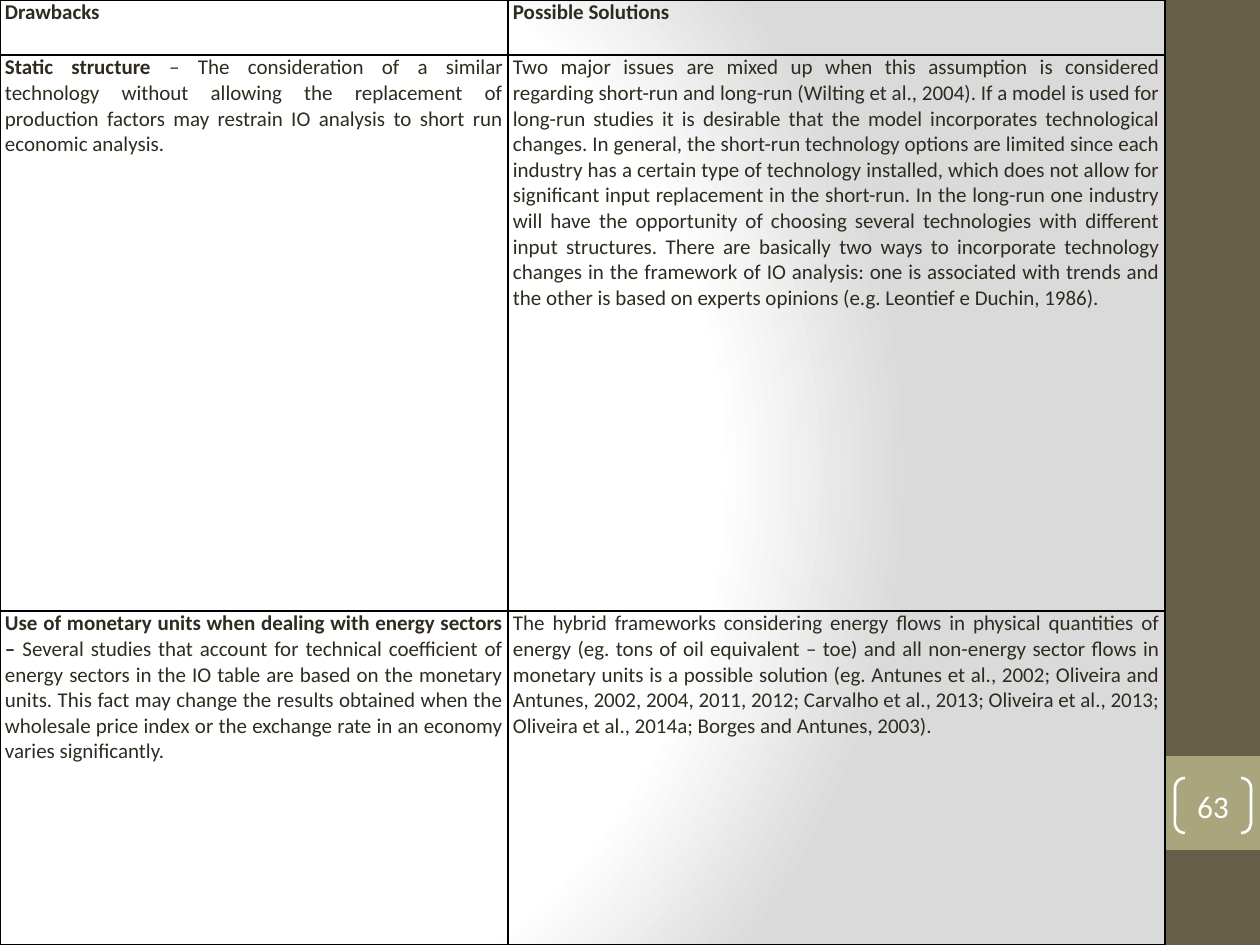
from dataclasses import dataclass

from lxml import etree
from pptx import Presentation
from pptx import util as u
from pptx.dml.color import RGBColor
from pptx.enum import shapes, text
from pptx.oxml import parse_xml
from pptx.oxml.ns import nsdecls, qn

SCALE = 914400 / 126


@dataclass(frozen=True)
class Theme:
    font: str = "Calibri"
    ink: str = "2F2B20"
    sidebar: str = "675E47"
    accent: str = "A9A57C"
    white: str = "FFFFFF"
    shade: str = "DADADA"
    border: str = "000000"
    body_size: int = 12
    number_size: int = 18


def px(length):
    return u.Emu(round(length * SCALE))


def rgb(value):
    return RGBColor.from_string(value)


class SlideBuilder:
    """Draws styled elements on the current slide."""

    def __init__(self, slide, theme):
        self.slide = slide
        self.theme = theme

    def background(self):
        theme = self.theme
        stops = [(0, theme.white), (75000, theme.white), (100000, theme.shade)]
        stop_xml = "".join(
            f'<a:gs pos="{pos}"><a:srgbClr val="{color}"/></a:gs>' for pos, color in stops)
        self.slide.element.cSld.insert(0, parse_xml(
            f'<p:bg {nsdecls("p", "a")}><p:bgPr><a:gradFill rotWithShape="1">'
            f'<a:gsLst>{stop_xml}</a:gsLst><a:path path="circle">'
            '<a:fillToRect l="20000" t="50000" r="100000" b="50000"/></a:path>'
            '</a:gradFill><a:effectLst/></p:bgPr></p:bg>'))

    def shape(self, kind, left, top, width, height):
        shape = self.slide.shapes.add_shape(kind, px(left), px(top), px(width), px(height))
        shape.shadow.inherit = False
        return shape

    def block(self, left, top, width, height, color):
        block = self.shape(shapes.MSO_SHAPE.RECTANGLE, left, top, width, height)
        block.fill.solid()
        block.fill.fore_color.rgb = rgb(color)
        block.line.fill.background()

    def style(self, paragraph, size, color, align):
        paragraph.alignment = align
        paragraph.font.name = self.theme.font
        paragraph.font.size = u.Pt(size)
        paragraph.font.color.rgb = rgb(color)

    def page_number(self, left, top, width, height, number):
        bracket = self.shape(shapes.MSO_SHAPE.DOUBLE_BRACKET, left, top, width, height)
        bracket.adjustments[0] = 0.18
        bracket.fill.background()
        bracket.line.color.rgb = rgb(self.theme.white)
        bracket.line.width = u.Pt(1.5)
        frame = bracket.text_frame
        frame.margin_left = frame.margin_right = frame.margin_top = frame.margin_bottom = 0
        frame.vertical_anchor = text.MSO_ANCHOR.MIDDLE
        frame.text = number
        self.style(frame.paragraphs[0], self.theme.number_size, self.theme.white,
                   text.PP_ALIGN.CENTER)

    def cell(self, cell, heading, detail):
        cell.margin_left = cell.margin_right = px(5)
        cell.margin_top = cell.margin_bottom = 0
        para = cell.text_frame.paragraphs[0]
        self.style(para, self.theme.body_size, self.theme.ink, text.PP_ALIGN.JUSTIFY)
        for content, bold in ((heading, True), (detail, False)):
            if content:
                span = para.add_run()
                span.text = content
                span.font.bold = bold
        properties = cell._tc.get_or_add_tcPr()
        for side in ("a:lnL", "a:lnR", "a:lnT", "a:lnB"):
            line = etree.SubElement(properties, qn(side), w=str(u.Pt(1)))
            fill = etree.SubElement(line, qn("a:solidFill"))
            etree.SubElement(fill, qn("a:srgbClr"), val=self.theme.border)
        cell.fill.background()

    def table(self, left, top, widths, heights, rows):
        table = self.slide.shapes.add_table(
            len(heights), len(widths), px(left), px(top), px(sum(widths)), px(sum(heights))).table
        table.first_row = table.horz_banding = False
        for column, width in zip(table.columns, widths):
            column.width = px(width)
        for row, height, contents in zip(table.rows, heights, rows):
            row.height = px(height)
            for cell, (heading, detail) in zip(row.cells, contents):
                self.cell(cell, heading, detail)


ROWS = [
    [("Drawbacks", ""), ("Possible Solutions", "")],
    [("Static structure ",
      "– The consideration of a similar technology without allowing the replacement of "
      "production factors may restrain IO analysis to short run economic analysis."),
     ("",
      "Two major issues are mixed up when this assumption is considered regarding short-run "
      "and long-run (Wilting et al., 2004). If a model is used for long-run studies it is "
      "desirable that the model incorporates technological changes. In general, the short-run "
      "technology options are limited since each industry has a certain type of technology "
      "installed, which does not allow for significant input replacement in the short-run. In "
      "the long-run one industry will have the opportunity of choosing several technologies "
      "with different input structures. There are basically two ways to incorporate technology "
      "changes in the framework of IO analysis: one is associated with trends and the other is "
      "based on experts opinions (e.g. Leontief e Duchin, 1986). ")],
    [("Use of monetary units when dealing with energy sectors – ",
      "Several studies that account for technical coefficient of energy sectors in the IO table "
      "are based on the monetary units. This fact may change the results obtained when the "
      "wholesale price index or the exchange rate in an economy varies significantly."),
     ("",
      "The hybrid frameworks considering energy flows in physical quantities of energy (eg. "
      "tons of oil equivalent – toe) and all non-energy sector flows in monetary units is a "
      "possible solution (eg. Antunes et al., 2002; Oliveira and Antunes, 2002, 2004, 2011, "
      "2012; Carvalho et al., 2013; Oliveira et al., 2013; Oliveira et al., 2014a; Borges and "
      "Antunes, 2003).")],
]


def main():
    deck = Presentation()
    deck.slide_width, deck.slide_height = px(1260), px(945)
    theme = Theme()
    page = SlideBuilder(deck.slides.add_slide(deck.slide_layouts[6]), theme)
    page.background()
    page.block(1166, 0, 94, 945, theme.sidebar)
    page.block(1166, 756, 94, 94, theme.accent)
    page.table(0, 0, [508, 657], [55, 556, 334], ROWS)
    page.page_number(1175, 778, 76, 55, "63")
    deck.save("out.pptx")


if __name__ == "__main__":
    main()
